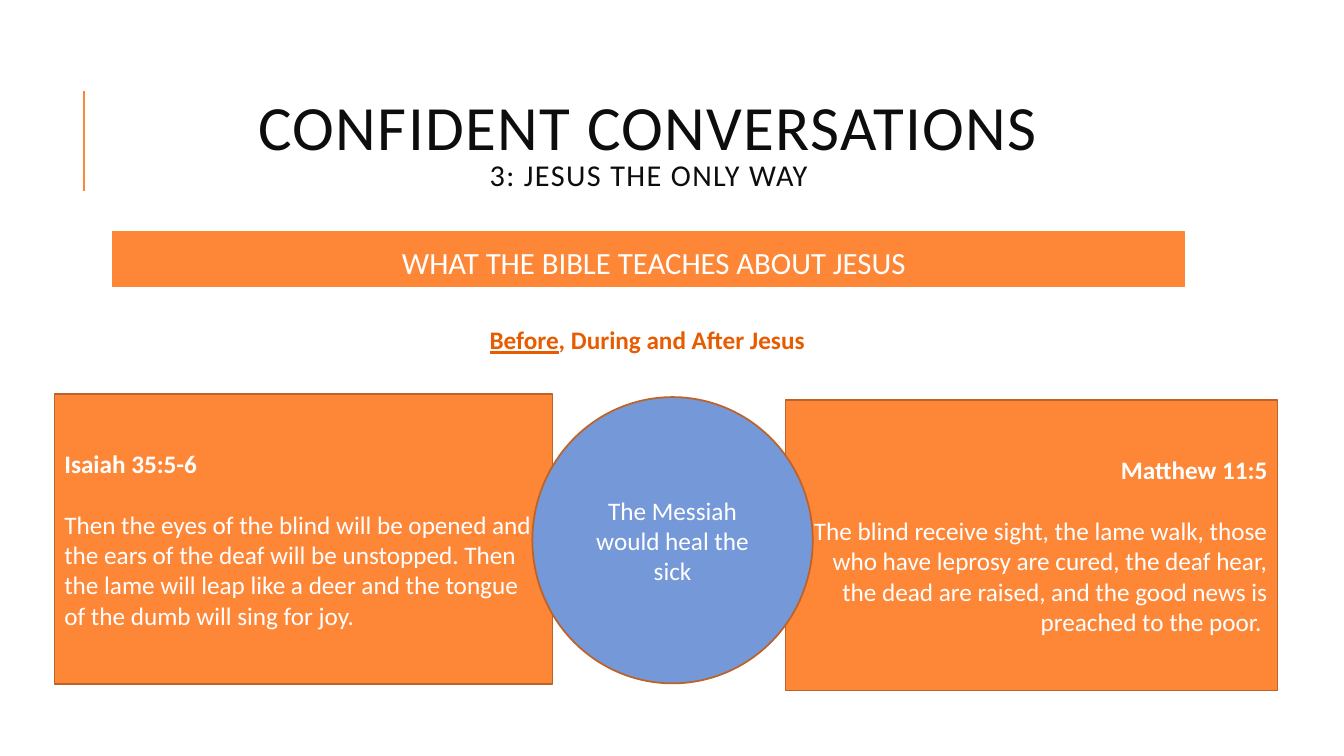
from dataclasses import dataclass

from lxml import etree
from pptx import Presentation
from pptx.dml.color import RGBColor
from pptx.enum.shapes import MSO_CONNECTOR, MSO_SHAPE
from pptx.enum.text import MSO_ANCHOR, PP_ALIGN
from pptx.oxml.ns import qn
from pptx.util import Inches, Pt

RECTANGLE, OVAL = MSO_SHAPE.RECTANGLE, MSO_SHAPE.OVAL
STRAIGHT = MSO_CONNECTOR.STRAIGHT
LEFT, CENTER, RIGHT = PP_ALIGN.LEFT, PP_ALIGN.CENTER, PP_ALIGN.RIGHT
TOP, MIDDLE, BOTTOM = MSO_ANCHOR.TOP, MSO_ANCHOR.MIDDLE, MSO_ANCHOR.BOTTOM

# The grid has 100 columns and 100 rows
SLIDE_WIDTH, SLIDE_HEIGHT = Inches(13.33), Inches(7.5)
FONT = "Calibri"
ORANGE, BROWN, BLUE = "FE8637", "BC6329", "7598D9"
WHITE, INK, DEEP_ORANGE = "FFFFFF", "0D0D0D", "E75C01"


@dataclass(frozen=True)
class Area:
    column: float
    row: float
    columns: float
    rows: float


@dataclass(frozen=True)
class Run:
    text: str
    size: float | None = None
    underline: bool = False
    break_after: bool = False
    tracking: int = 0


@dataclass(frozen=True)
class Line:
    runs: tuple[Run, ...]
    size: float = 18
    bold: bool = False
    spacing: float = 1.0
    space_after: float = 0


@dataclass(frozen=True)
class Block:
    area: Area
    lines: tuple[Line, ...]
    align: PP_ALIGN = CENTER
    anchor: MSO_ANCHOR = MIDDLE
    color: str = WHITE
    preset: MSO_SHAPE | None = None
    fill: str = ORANGE
    outline: str = BROWN
    outline_width: float = 1.25
    insets: tuple[float, float, float, float] = (0.1, 0.05, 0.1, 0.05)


def rgb(value: str) -> RGBColor:
    return RGBColor.from_string(value)


def across(columns: float) -> int:
    return round(SLIDE_WIDTH * columns / 100)


def down(rows: float) -> int:
    return round(SLIDE_HEIGHT * rows / 100)


def verse(area: Area, reference: str, text: str, align: PP_ALIGN) -> Block:
    heading = Line((Run(reference),), bold=True, space_after=22)
    return Block(area, (heading, Line((Run(text),))), align, preset=RECTANGLE)


def write_line(paragraph, line: Line, align: PP_ALIGN, color: str) -> None:
    paragraph.alignment = align
    paragraph.line_spacing = line.spacing
    paragraph.space_after = Pt(line.space_after)
    paragraph.font.name = FONT
    paragraph.font.size = Pt(line.size)
    paragraph.font.bold = line.bold
    paragraph.font.color.rgb = rgb(color)
    for item in line.runs:
        run = paragraph.add_run()
        run.text = item.text
        if item.size:
            run.font.size = Pt(item.size)
        if item.underline:
            run.font.underline = True
        if item.tracking:
            run._r.get_or_add_rPr().set("spc", str(item.tracking))
        if item.break_after:
            paragraph.add_line_break()


def draw_block(slide, block: Block) -> None:
    area = block.area
    bounds = (across(area.column), down(area.row),
              across(area.columns), down(area.rows))
    if block.preset is None:
        shape = slide.shapes.add_textbox(*bounds)
    else:
        shape = slide.shapes.add_shape(block.preset, *bounds)
        shape.shadow.inherit = False
        shape.fill.solid()
        shape.fill.fore_color.rgb = rgb(block.fill)
        shape.line.color.rgb = rgb(block.outline)
        shape.line.width = Pt(block.outline_width)
    frame = shape.text_frame
    frame.word_wrap = True
    frame.vertical_anchor = block.anchor
    (frame.margin_left, frame.margin_top,
     frame.margin_right, frame.margin_bottom) = map(Inches, block.insets)
    for index, line in enumerate(block.lines):
        paragraph = frame.add_paragraph() if index else frame.paragraphs[0]
        write_line(paragraph, line, block.align, block.color)


def draw_title_rule(slide) -> None:
    rule = slide.shapes.add_connector(
        STRAIGHT, across(6.23), down(25.33), across(6.23), down(12))
    rule.line.color.rgb = rgb(ORANGE)
    rule.line.width = Pt(1.5)
    etree.SubElement(rule._element.spPr, qn("a:effectLst"))


BLOCKS = (
    verse(Area(58.44, 52.93, 36.61, 38.4), "Matthew 11:5",
          "The blind receive sight, the lame walk, those who have leprosy are "
          "cured, the deaf hear, the dead are raised, and the good news is "
          "preached to the poor. ", RIGHT),
    # Title
    Block(Area(8.4, 8.53, 79.74, 21.87),
          (Line((Run("CONFIDENT CONVERSATIONS", break_after=True, tracking=100),
                 Run("3: JESUS THE ONLY WAY", size=21.6, tracking=100)),
                size=45, spacing=0.8),),
          color=INK),
    # Banner
    Block(Area(8.4, 30.67, 79.74, 7.2),
          (Line((Run("WHAT THE BIBLE TEACHES ABOUT JESUS"),),
                size=22, spacing=1.2, space_after=2),),
          anchor=TOP, preset=RECTANGLE, outline=ORANGE, outline_width=0.75,
          insets=(0.15, 0.05, 0.05, 0.05)),
    # Subheading
    Block(Area(8.4, 38.13, 79.52, 9.47),
          (Line((Run("Before", underline=True),
                 Run(", During and After Jesus")), bold=True),),
          anchor=BOTTOM, color=DEEP_ORANGE),
    verse(Area(4.05, 52.13, 37.06, 38.4), "Isaiah 35:5-6",
          "Then the eyes of the blind will be opened and the ears of the deaf "
          "will be unstopped. Then the lame will leap like a deer and the "
          "tongue of the dumb will sing for joy.", LEFT),
    # Shared meaning of both verses
    Block(Area(39.61, 52.53, 20.86, 37.87),
          (Line((Run("The Messiah would heal the sick"),)),),
          preset=OVAL, fill=BLUE),
)


def main() -> None:
    presentation = Presentation()
    presentation.slide_width = SLIDE_WIDTH
    presentation.slide_height = SLIDE_HEIGHT
    slide = presentation.slides.add_slide(presentation.slide_layouts[6])
    draw_title_rule(slide)
    for block in BLOCKS:
        draw_block(slide, block)
    presentation.save("out.pptx")


if __name__ == "__main__":
    main()
